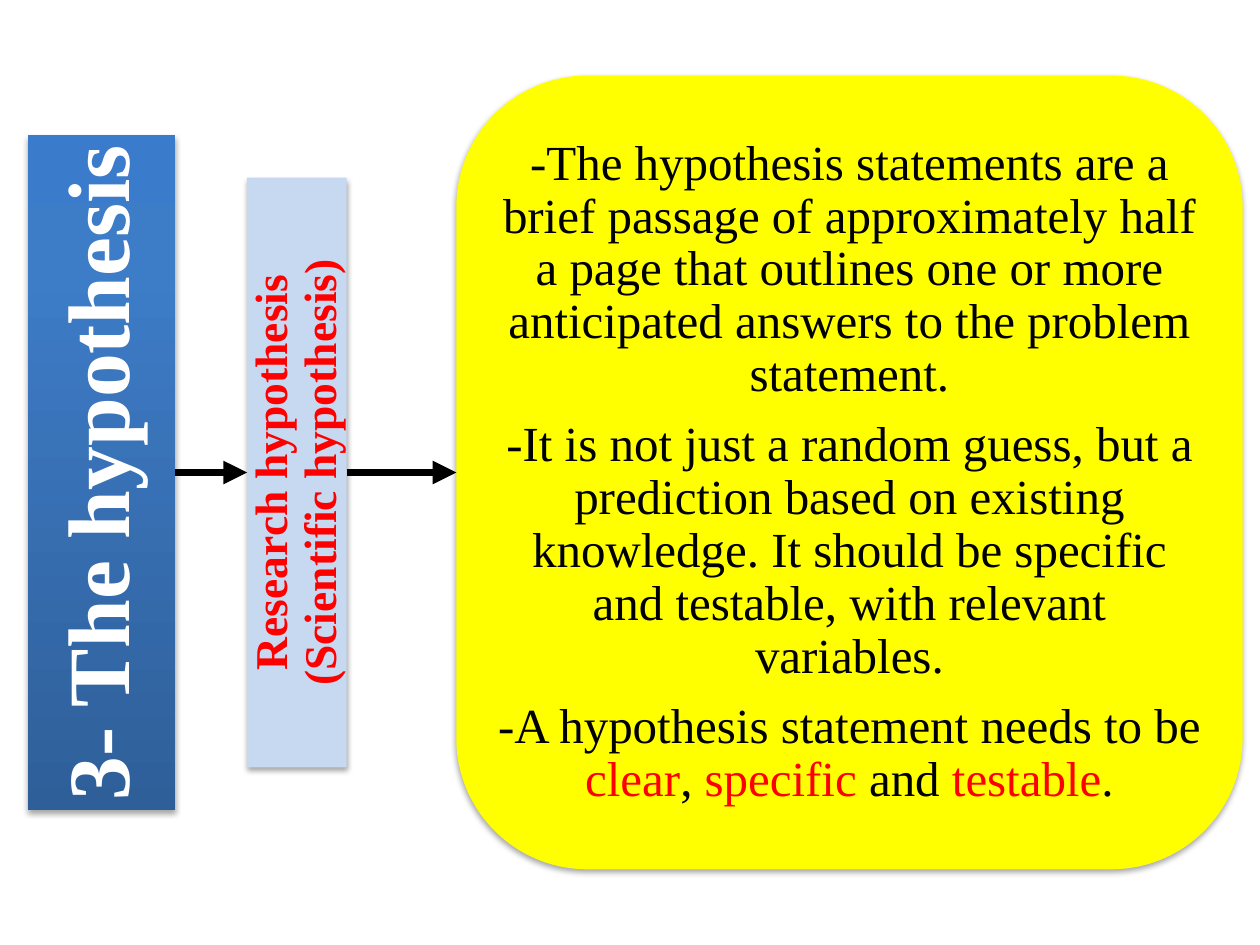
from dataclasses import dataclass

from lxml.etree import SubElement
from pptx import Presentation
from pptx.dml.color import RGBColor as RGB
from pptx.enum.shapes import MSO_CONNECTOR as Connector, MSO_SHAPE as Shape
from pptx.enum.text import MSO_ANCHOR as Anchor, PP_ALIGN as Align
from pptx.oxml.ns import qn
from pptx.util import Cm, Pt


@dataclass(frozen=True)
class Theme:
    font: str = "Times New Roman"
    black: str = "000000"
    white: str = "FFFFFF"
    red: str = "FF0000"
    pale_blue: str = "C6D9F1"
    yellow: str = "FFFF00"
    title_stops: tuple = ((0, "2F5F99"), (80, "3D7CC7"), (100, "3A7CCB"))
    title_size: int = 50
    label_size: int = 26
    body_size: int = 28
    arrow_width: float = 4.5


THEME = Theme()
SLIDE_WIDTH, SLIDE_HEIGHT = Cm(25.4), Cm(19.05)
MIDDLE = SLIDE_HEIGHT // 2

STATEMENTS = [
    [("-The hypothesis statements are a brief passage of approximately half a page "
      "that outlines one or more anticipated answers to the problem statement.", THEME.black)],
    [("-It is not just a random guess, but a prediction based on existing knowledge. "
      "It should be specific and testable, with relevant variables.", THEME.black)],
    [("-A hypothesis statement needs to be ", THEME.black), ("clear", THEME.red),
     (", ", THEME.black), ("specific", THEME.red), (" and ", THEME.black),
     ("testable", THEME.red), (".", THEME.black)],
]


def write_text(shape, paragraphs, *, size, bold=False, inset=Cm(0.05)):
    """Fill a shape with paragraphs, each a list of (text, colour) runs."""
    frame = shape.text_frame
    frame.word_wrap = True
    frame.vertical_anchor = Anchor.MIDDLE
    frame.margin_left = frame.margin_right = inset
    frame.margin_top = frame.margin_bottom = inset
    for index, runs in enumerate(paragraphs):
        paragraph = frame.add_paragraph() if index else frame.paragraphs[0]
        paragraph.alignment = Align.CENTER
        paragraph.line_spacing = 0.9
        paragraph.space_after = Pt(0.35 * size)
        for text, colour in runs:
            run = paragraph.add_run()
            run.text = text
            run.font.name = THEME.font
            run.font.size = Pt(size)
            run.font.bold = bold
            run.font.color.rgb = RGB.from_string(colour)


def add_soft_shadow(shape):
    shape.shadow.inherit = False
    effects = shape._element.spPr.find(qn("a:effectLst"))
    shadow = SubElement(effects, qn("a:outerShdw"), blurRad="40000", dist="23000",
                        dir="5400000", rotWithShape="0")
    colour = SubElement(shadow, qn("a:srgbClr"), val=THEME.black)
    SubElement(colour, qn("a:alpha"), val="35000")


def fill_upward_gradient(shape, stops):
    """Grade the fill from bottom to top, whatever the rotation of the shape."""
    shape.fill.gradient()
    shape.fill.gradient_angle = 90
    gradient = shape._element.spPr.find(qn("a:gradFill"))
    gradient.set("rotWithShape", "0")
    stop_list = gradient.find(qn("a:gsLst"))
    for old_stop in list(stop_list):
        stop_list.remove(old_stop)
    for percent, colour in stops:
        stop = SubElement(stop_list, qn("a:gs"), pos=str(percent * 1000))
        SubElement(stop, qn("a:srgbClr"), val=colour)


def add_block(slide, kind, box, colour=None):
    block = slide.shapes.add_shape(kind, *box)
    if colour:
        block.fill.solid()
        block.fill.fore_color.rgb = RGB.from_string(colour)
    block.line.fill.background()
    add_soft_shadow(block)
    return block


def add_title_bar(slide, box):
    """Place a bar in the upright box, turned so that its text reads upward."""
    left, top, width, height = box
    turned = (left + (width - height) // 2, top + (height - width) // 2, height, width)
    bar = add_block(slide, Shape.RECTANGLE, turned)
    bar.rotation = 270
    fill_upward_gradient(bar, THEME.title_stops)
    write_text(bar, [[("3- The hypothesis", THEME.white)]],
               size=THEME.title_size, bold=True, inset=Cm(0.08))
    return bar


def add_type_label(slide, box):
    label = add_block(slide, Shape.RECTANGLE, box, THEME.pale_blue)
    write_text(label, [[("Research hypothesis (Scientific hypothesis)", THEME.red)]],
               size=THEME.label_size, bold=True)
    label.text_frame._txBody.bodyPr.set("vert", "vert270")
    return label


def add_statement_panel(slide, box):
    panel = add_block(slide, Shape.FLOWCHART_ALTERNATE_PROCESS, box, THEME.yellow)
    write_text(panel, STATEMENTS, size=THEME.body_size)
    return panel


def add_arrow(slide, source, source_side, source_right, target):
    """Join the visible right side of source to the left side of target."""
    arrow = slide.shapes.add_connector(Connector.STRAIGHT, source_right, MIDDLE,
                                       target.left, MIDDLE)
    arrow.begin_connect(source, source_side)
    arrow.end_connect(target, 1)
    # A turned shape keeps unturned coordinates, so the ends are set again.
    arrow.begin_x, arrow.begin_y = source_right, MIDDLE
    arrow.end_x, arrow.end_y = target.left, MIDDLE
    arrow.line.width = Pt(THEME.arrow_width)
    arrow.line.color.rgb = RGB.from_string(THEME.black)
    SubElement(arrow.line._get_or_add_ln(), qn("a:tailEnd"), type="triangle")
    SubElement(arrow._element.spPr, qn("a:effectLst"))


def centred_box(left, width, height):
    return left, MIDDLE - height // 2, width, height


def main():
    deck = Presentation()
    deck.slide_width, deck.slide_height = SLIDE_WIDTH, SLIDE_HEIGHT
    slide = deck.slides.add_slide(deck.slide_layouts[6])

    title_box = centred_box(Cm(0.56), Cm(2.97), Cm(13.59))
    title = add_title_bar(slide, title_box)
    label = add_type_label(slide, centred_box(Cm(4.98), Cm(2.01), Cm(11.89)))
    panel = add_statement_panel(slide, centred_box(Cm(9.2), Cm(15.85), Cm(16)))

    add_arrow(slide, title, 2, title_box[0] + title_box[2], label)
    add_arrow(slide, label, 3, label.left + label.width, panel)

    deck.save("out.pptx")


if __name__ == "__main__":
    main()
